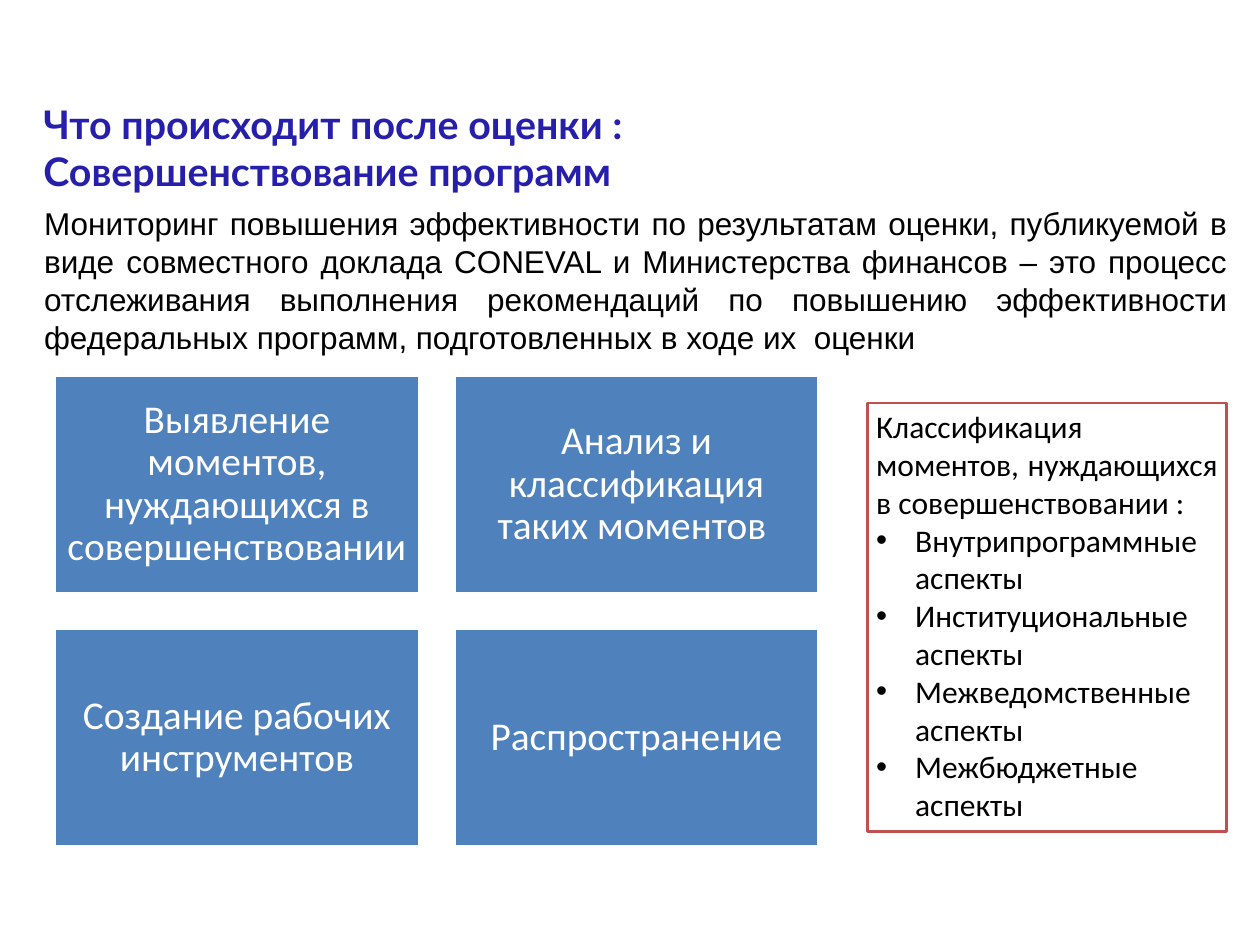
import pptx
import pptx.dml.color
import pptx.enum.shapes
import pptx.enum.text
import pptx.util
from lxml import etree
from pptx.oxml.ns import qn
from pptx.util import Inches

ALIGN = pptx.enum.text.PP_ALIGN
ANCHOR = pptx.enum.text.MSO_ANCHOR

TITLE = ["Что происходит после оценки :", "Совершенствование программ"]
INTRO = [
    "Мониторинг повышения эффективности по результатам оценки, публикуемой в виде "
    "совместного доклада CONEVAL и Министерства финансов – это процесс отслеживания "
    "выполнения рекомендаций по повышению эффективности федеральных программ, "
    "подготовленных в ходе их  оценки"
]
STEPS = [
    "Выявление моментов, нуждающихся в совершенствовании",
    "Анализ и классификация таких моментов ",
    "Создание рабочих инструментов",
    "Распространение",
]
CLASSES_HEADING = "Классификация моментов, нуждающихся в совершенствовании :"
CLASSES = [
    "Внутрипрограммные аспекты",
    "Институциональные аспекты",
    "Межведомственные аспекты",
    "Межбюджетные аспекты",
]

GRID_LEFT, GRID_TOP = 0.62, 4.24
CARD_WIDTH, CARD_HEIGHT = 4.11, 2.46
GRID_GAP = 0.4
GRID_COLUMNS = 2
BULLET_INDENT = 0.44


def color(hex_string):
    return pptx.dml.color.RGBColor.from_string(hex_string)


def add_bullet(paragraph):
    properties = paragraph._p.get_or_add_pPr()
    properties.set("marL", str(Inches(BULLET_INDENT)))
    properties.set("indent", str(-Inches(BULLET_INDENT)))
    etree.SubElement(properties, qn("a:buFont")).set("typeface", "Arial")
    etree.SubElement(properties, qn("a:buChar")).set("char", "•")


def write(shape, lines, *, size, font="Calibri", ink="000000", bold=False,
          align=ALIGN.LEFT, anchor=ANCHOR.TOP, spacing=None, inset=None,
          bullets_from=None):
    """Fill a shape with one paragraph per line; lines from bullets_from on get bullets."""
    frame = shape.text_frame
    frame.word_wrap = True
    frame.vertical_anchor = anchor
    if inset is not None:
        frame.margin_left = frame.margin_right = Inches(inset)
        frame.margin_top = frame.margin_bottom = Inches(inset)
    for index, line in enumerate(lines):
        paragraph = frame.add_paragraph() if index else frame.paragraphs[0]
        paragraph.text = line
        paragraph.alignment = align
        if spacing is not None:
            paragraph.line_spacing = spacing
        if bullets_from is not None and index >= bullets_from:
            add_bullet(paragraph)
        for run in paragraph.runs:
            run.font.name = font
            run.font.size = pptx.util.Pt(size)
            run.font.bold = bold
            run.font.color.rgb = color(ink)


def add_text_box(slide, left, top, width, height):
    return slide.shapes.add_textbox(
        Inches(left), Inches(top), Inches(width), Inches(height))


def add_rectangle(slide, left, top, width, height, *, fill, line):
    shape = slide.shapes.add_shape(
        pptx.enum.shapes.MSO_SHAPE.RECTANGLE,
        Inches(left), Inches(top), Inches(width), Inches(height))
    shape.shadow.inherit = False
    shape.fill.solid()
    shape.fill.fore_color.rgb = color(fill)
    shape.line.color.rgb = color(line)
    shape.line.width = pptx.util.Pt(2)
    return shape


def main():
    presentation = pptx.Presentation()
    presentation.slide_width = Inches(14.22)
    presentation.slide_height = Inches(10.67)
    slide = presentation.slides.add_slide(presentation.slide_layouts[6])

    title = add_text_box(slide, 0.39, 1.08, 12.99, 1.18)
    write(title, TITLE, size=32, font="Lato", ink="261FAB", bold=True)
    intro = add_text_box(slide, 0.4, 2.26, 13.55, 1.82)
    write(intro, INTRO, size=25.6, font="Arial", align=ALIGN.JUSTIFY)

    for index, step in enumerate(STEPS):
        row, column = divmod(index, GRID_COLUMNS)
        card = add_rectangle(
            slide,
            GRID_LEFT + column * (CARD_WIDTH + GRID_GAP),
            GRID_TOP + row * (CARD_HEIGHT + GRID_GAP),
            CARD_WIDTH, CARD_HEIGHT, fill="4F81BD", line="FFFFFF")
        write(card, [step], size=32, ink="FFFFFF", align=ALIGN.CENTER,
              anchor=ANCHOR.MIDDLE, spacing=0.9, inset=0.13)

    classes = add_rectangle(slide, 9.79, 4.55, 4.05, 4.84, fill="FFFFFF", line="C0504D")
    write(classes, [CLASSES_HEADING, *CLASSES], size=25.6, align=ALIGN.JUSTIFY,
          bullets_from=1)

    presentation.save("out.pptx")


if __name__ == "__main__":
    main()
